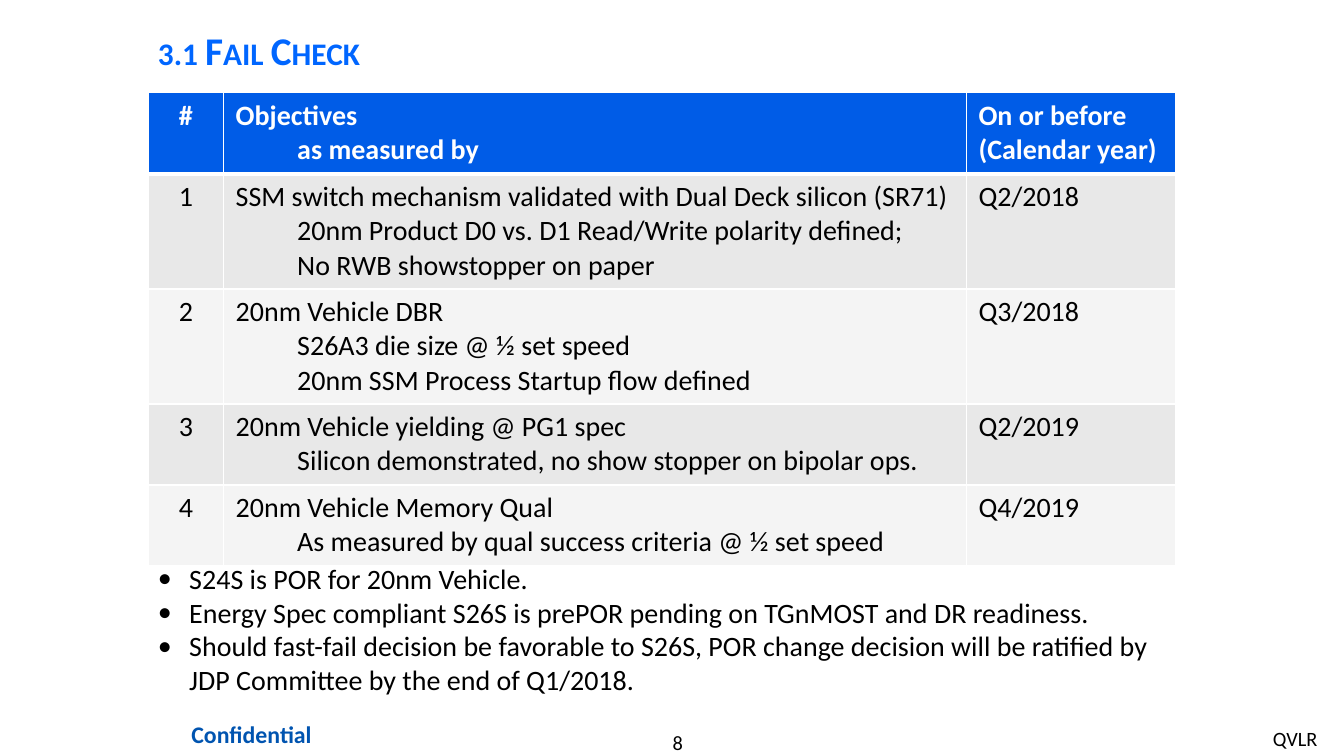
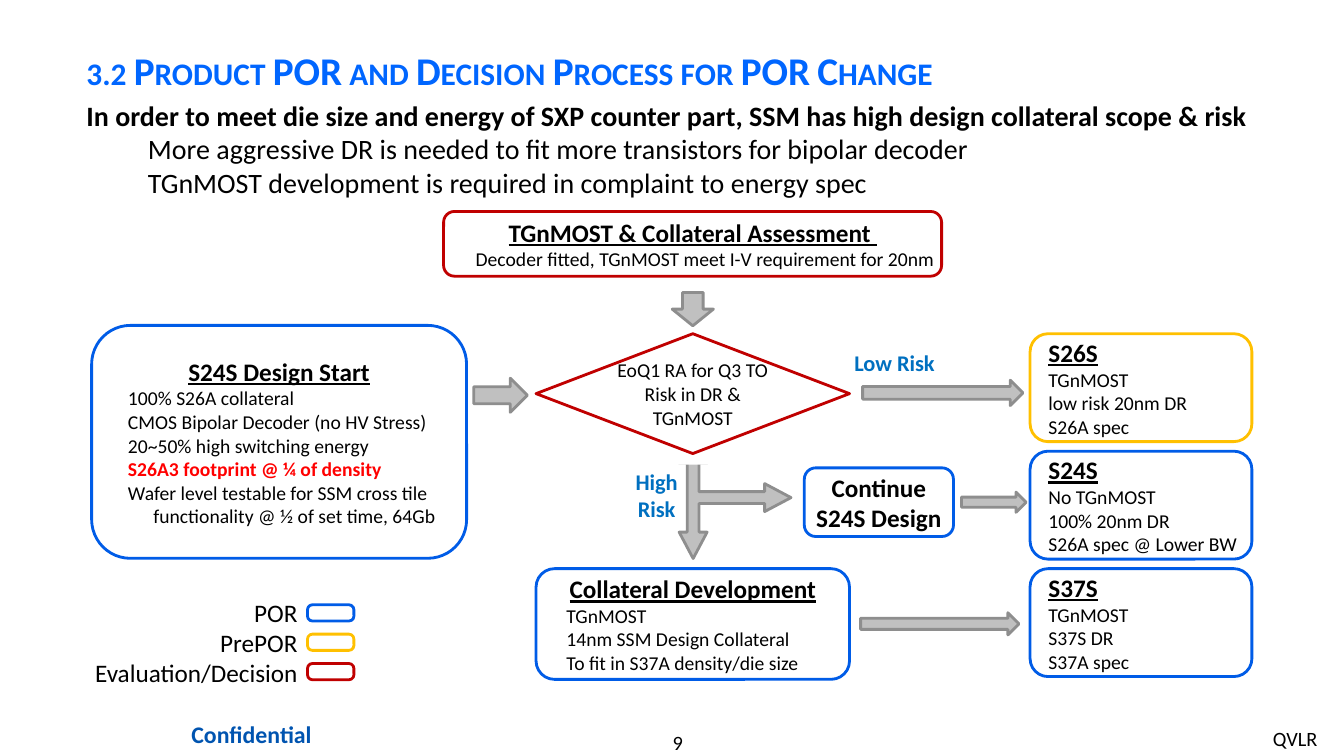
from dataclasses import dataclass

import pptx
import pptx.dml.color
import pptx.enum.shapes
import pptx.enum.text
import pptx.oxml
import pptx.oxml.ns
import pptx.util

Cm = pptx.util.Cm
Pt = pptx.util.Pt
RGBColor = pptx.dml.color.RGBColor
SHAPE = pptx.enum.shapes.MSO_SHAPE
ANCHOR = pptx.enum.text.MSO_ANCHOR
ALIGN = pptx.enum.text.PP_ALIGN
LEFT, CENTER, RIGHT = ALIGN.LEFT, ALIGN.CENTER, ALIGN.RIGHT

# Shared look
FONT = "Calibri"
BLACK = RGBColor(0x00, 0x00, 0x00)
WHITE = RGBColor(0xFF, 0xFF, 0xFF)
TITLE_BLUE = RGBColor(0x00, 0x66, 0xFF)
FOOTER_BLUE = RGBColor(0x00, 0x54, 0xB0)
LABEL_BLUE = RGBColor(0x00, 0x70, 0xC0)
POR_BLUE = RGBColor(0x00, 0x5C, 0xE7)
PREPOR_GOLD = RGBColor(0xFF, 0xC0, 0x00)
DECISION_RED = RGBColor(0xC0, 0x00, 0x00)
ALERT_RED = RGBColor(0xFF, 0x00, 0x00)
ARROW_FILL = RGBColor(0xC0, 0xC0, 0xC0)
ARROW_EDGE = RGBColor(0x8E, 0x8E, 0x8E)
ROW_FILLS = (RGBColor(0xE8, 0xE8, 0xE8), RGBColor(0xF4, 0xF4, 0xF4))

BOX_INSETS = (0.25, 0.13)
WIDE_INSETS = (0.3, 0.15)
NO_INSETS = (0, 0)
SUB_INDENT = 1.55


@dataclass
class Line:
    """One paragraph and its look; indents are in centimetres."""
    text: str
    size: float = 20
    bold: bool = False
    color: RGBColor = BLACK
    underline: bool = False
    align: ALIGN = LEFT
    left: float = 0
    first: float = 0
    bullet: str = ""
    small_caps: bool = False
    spacing: float = 1.0


# Text
def write_lines(frame, lines, insets=BOX_INSETS, anchor=ANCHOR.TOP):
    frame.word_wrap = True
    frame.vertical_anchor = anchor
    frame.margin_left = frame.margin_right = Cm(insets[0])
    frame.margin_top = frame.margin_bottom = Cm(insets[1])
    for index, line in enumerate(lines):
        para = frame.add_paragraph() if index else frame.paragraphs[0]
        para.text = line.text
        para.alignment = line.align
        para.line_spacing = line.spacing
        props = para._p.get_or_add_pPr()
        props.set("marL", str(Cm(line.left)))
        props.set("indent", str(Cm(line.first)))
        if line.bullet:
            for tag, attributes in (("a:buFont", {"typeface": FONT}),
                                    ("a:buChar", {"char": line.bullet})):
                props.append(props.makeelement(
                    pptx.oxml.ns.qn(tag), attributes))
        for span in para.runs:
            font = span.font
            font.name, font.size = FONT, Pt(line.size)
            font.bold, font.underline = line.bold, line.underline
            font.color.rgb = line.color
            if line.small_caps:
                span._r.get_or_add_rPr().set("cap", "small")


def add_text(page, place, lines, insets=BOX_INSETS, anchor=ANCHOR.TOP):
    box = page.shapes.add_textbox(*map(Cm, place))
    write_lines(box.text_frame, lines, insets, anchor)


def add_title(page, place, text, spacing=1.0):
    title = Line(text, 28, True, TITLE_BLUE, small_caps=True, spacing=spacing)
    add_text(page, place, [title], anchor=ANCHOR.MIDDLE)


def add_footer(page, number):
    add_text(page, (14.12, 18.39, 5.92, 0.61),
             [Line(str(number), 14.5, align=CENTER)], NO_INSETS)
    add_text(page, (31.83, 18.16, 1.78, 0.89), [Line("QVLR", 14.5)])
    add_text(page, (3.94, 17.98, 4.8, 1.04),
             [Line("Confidential", 17, True, FOOTER_BLUE, align=CENTER)],
             WIDE_INSETS)


# Shapes
def add_shape(page, kind, place, fill=None, edge=None):
    shape = page.shapes.add_shape(kind, *map(Cm, place))
    shape.shadow.inherit = False
    if fill is None:
        shape.fill.background()
    else:
        shape.fill.solid()
        shape.fill.fore_color.rgb = fill
    if edge is None:
        shape.line.fill.background()
    else:
        shape.line.color.rgb = edge
        shape.line.width = Pt(2)
    return shape


def add_node(page, place, edge, lines, kind=SHAPE.ROUNDED_RECTANGLE):
    node = add_shape(page, kind, place, edge=edge)
    write_lines(node.text_frame, lines, NO_INSETS, ANCHOR.MIDDLE)


def add_arrow(page, place, kind=SHAPE.RIGHT_ARROW):
    return add_shape(page, kind, place, ARROW_FILL, ARROW_EDGE)


def heading(text, align=CENTER, left=0):
    return Line(text, 18, True, underline=True, align=align, left=left)


def hanging(text, **look):
    return Line(text, 14, left=1.27, first=-0.64, **look)


# Table
def set_borders(cell, top, bottom):
    props = cell._tc.get_or_add_tcPr()
    for side, width in (("L", 1), ("R", 1), ("T", top), ("B", bottom)):
        props.append(pptx.oxml.parse_xml(
            f'<a:ln{side} {pptx.oxml.ns.nsdecls("a")} w="{Pt(width)}">'
            f'<a:solidFill><a:srgbClr val="{WHITE}"/></a:solidFill>'
            f'</a:ln{side}>'))


def add_objectives_table(page, left, top, widths, rows):
    heights = [0.32 + 0.86 * max(map(len, row)) for row in rows]
    frame = page.shapes.add_table(
        len(rows), len(widths), Cm(left), Cm(top),
        Cm(sum(widths)), Cm(sum(heights)))
    table = frame.table
    for column, width in zip(table.columns, widths):
        column.width = Cm(width)
    for r, row in enumerate(rows):
        table.rows[r].height = Cm(heights[r])
        header = r == 0
        for c, texts in enumerate(row):
            cell = table.cell(r, c)
            set_borders(cell, 3 if r == 1 else 1, 3 if header else 1)
            cell.fill.solid()
            cell.fill.fore_color.rgb = (
                POR_BLUE if header else ROW_FILLS[(r - 1) % 2])
            lines = [
                Line(text, bold=header, color=WHITE if header else BLACK,
                     align=LEFT if c else CENTER,
                     left=SUB_INDENT if c == 1 and i else 0)
                for i, text in enumerate(texts)]
            write_lines(cell.text_frame, lines)
            cell.margin_left = cell.margin_right = Cm(WIDE_INSETS[0])
            cell.margin_top = cell.margin_bottom = Cm(WIDE_INSETS[1])


# Pages
def build_fail_check(page):
    add_footer(page, 8)
    add_title(page, (3.73, 0.43, 28.78, 1.65), "3.1 Fail Check")
    rows = [
        (["#"], ["Objectives", "as measured by"],
         ["On or before", "(Calendar year)"]),
        (["1"], ["SSM switch mechanism validated with Dual Deck silicon (SR71)",
                 "20nm Product D0 vs. D1 Read/Write polarity defined;",
                 "No RWB showstopper on paper"], ["Q2/2018"]),
        (["2"], ["20nm Vehicle DBR",
                 "S26A3 die size @ ½ set speed",
                 "20nm SSM Process Startup flow defined"], ["Q3/2018"]),
        (["3"], ["20nm Vehicle yielding @ PG1 spec",
                 "Silicon demonstrated, no show stopper on bipolar ops."],
         ["Q2/2019"]),
        (["4"], ["20nm Vehicle Memory Qual",
                 "As measured by qual success criteria @ ½ set speed"],
         ["Q4/2019"]),
    ]
    add_objectives_table(page, 3.73, 2.34, (1.91, 18.72, 5.26), rows)
    notes = [
        "S24S is POR for 20nm Vehicle.",
        "Energy Spec compliant S26S is prePOR pending on TGnMOST and DR "
        "readiness.",
        "Should fast-fail decision be favorable to S26S, POR change decision "
        "will be ratified by JDP Committee by the end of Q1/2018.",
    ]
    add_text(page, (3.73, 14.02, 25.91, 3.68),
             [Line(note, left=0.79, first=-0.79, bullet="•") for note in notes])


def add_flow_arrows(page):
    split = add_arrow(page, (16.99, 11.13, 3.07, 2.82),
                      SHAPE.LEFT_RIGHT_UP_ARROW)
    split.rotation = 90
    for index, value in enumerate((0.106, 0.125, 0.236)):
        split.adjustments[index] = value
    # White cover hides the upper head of the split arrow
    add_shape(page, SHAPE.RECTANGLE, (16.81, 10.62, 1.19, 1.09), WHITE)
    for place in ((11.94, 9.53, 1.35, 0.86), (21.74, 9.58, 4.04, 0.64),
                  (21.69, 15.44, 3.99, 0.56), (24.23, 12.4, 1.63, 0.51)):
        add_arrow(page, place)
    add_arrow(page, (16.94, 7.37, 1.04, 0.84), SHAPE.DOWN_ARROW)


def add_flow_nodes(page):
    add_node(page, (11.18, 5.33, 12.55, 1.63), DECISION_RED, [
        heading("TGnMOST & Collateral Assessment "),
        hanging("Decoder fitted, TGnMOST meet I-V requirement for 20nm",
                align=CENTER)])
    add_node(page, (13.51, 8.41, 7.9, 3.02), DECISION_RED, [
        Line("EoQ1 RA for Q3 TO", 14, align=CENTER),
        Line("Risk in DR & TGnMOST", 14, align=CENTER)], SHAPE.DIAMOND)
    add_node(page, (2.31, 8.2, 9.45, 5.87), POR_BLUE, [
        heading("S24S Design Start"),
        hanging("100% S26A collateral"),
        hanging("CMOS Bipolar Decoder (no HV Stress)"),
        hanging("20~50% high switching energy"),
        hanging("S26A3 footprint @ ¼ of density", bold=True, color=ALERT_RED),
        hanging("Wafer level testable for SSM cross tile functionality "
                "@ ½ of set time, 64Gb")])
    add_node(page, (20.27, 11.79, 3.76, 1.73), POR_BLUE, [
        Line("Continue S24S Design", 18, True, align=CENTER)])
    add_node(page, (13.51, 14.33, 7.9, 2.79), POR_BLUE, [
        heading("Collateral Development"),
        hanging("TGnMOST"),
        hanging("14nm SSM Design Collateral"),
        hanging("To fit in S37A density/die size")])

    # Outcomes at an equal pitch
    outcomes = [
        (PREPOR_GOLD, "S26S", ("TGnMOST", "low risk 20nm DR", "S26A spec")),
        (POR_BLUE, "S24S",
         ("No TGnMOST", "100% 20nm DR", "S26A spec @ Lower BW")),
        (POR_BLUE, "S37S", ("TGnMOST", "S37S DR", "S37A spec")),
    ]
    for index, (edge, name, details) in enumerate(outcomes):
        add_node(page, (25.96, 8.41 + 2.96 * index, 5.59, 2.72), edge,
                 [heading(name, LEFT, 0.33)]
                 + [Line(text, 14, left=0.33) for text in details])

    # Branch labels
    for place, texts in (((21.26, 8.66, 2.57, 0.94), ["Low Risk"]),
                         ((15.75, 11.66, 1.6, 1.63), ["High", "Risk"])):
        add_text(page, place, [Line(text, 16, True, LABEL_BLUE, align=CENTER)
                               for text in texts], (0, 0.13))


def add_legend(page):
    entries = [("POR", POR_BLUE), ("PrePOR", PREPOR_GOLD),
               ("Evaluation/Decision", DECISION_RED)]
    for index, (_, edge) in enumerate(entries):
        swatch = add_shape(page, SHAPE.ROUNDED_RECTANGLE,
                           (7.75, 15.24 + 0.74 * index, 1.17, 0.41), edge=edge)
        swatch.adjustments[0] = 0.306
    add_text(page, (1.93, 14.91, 5.82, 2.57),
             [Line(text, 18, align=RIGHT) for text, _ in entries])


def build_decision_process(page):
    add_footer(page, 9)
    add_title(page, (1.93, 0.53, 28.09, 2.34),
              "3.2 Product POR and Decision Process for POR Change", 1.1)
    add_text(page, (1.93, 2.34, 30.3, 2.9), [
        Line("In order to meet die size and energy of SXP counter part, "
             "SSM has high design collateral scope & risk", bold=True),
        Line("More aggressive DR is needed to fit more transistors for "
             "bipolar decoder", left=SUB_INDENT),
        Line("TGnMOST development is required in complaint to energy spec",
             left=SUB_INDENT)])
    add_flow_arrows(page)
    add_flow_nodes(page)
    add_legend(page)


def main():
    deck = pptx.Presentation()
    deck.slide_width, deck.slide_height = Cm(33.87), Cm(19.05)
    for build in (build_fail_check, build_decision_process):
        build(deck.slides.add_slide(deck.slide_layouts[6]))
    deck.save("out.pptx")


if __name__ == "__main__":
    main()
